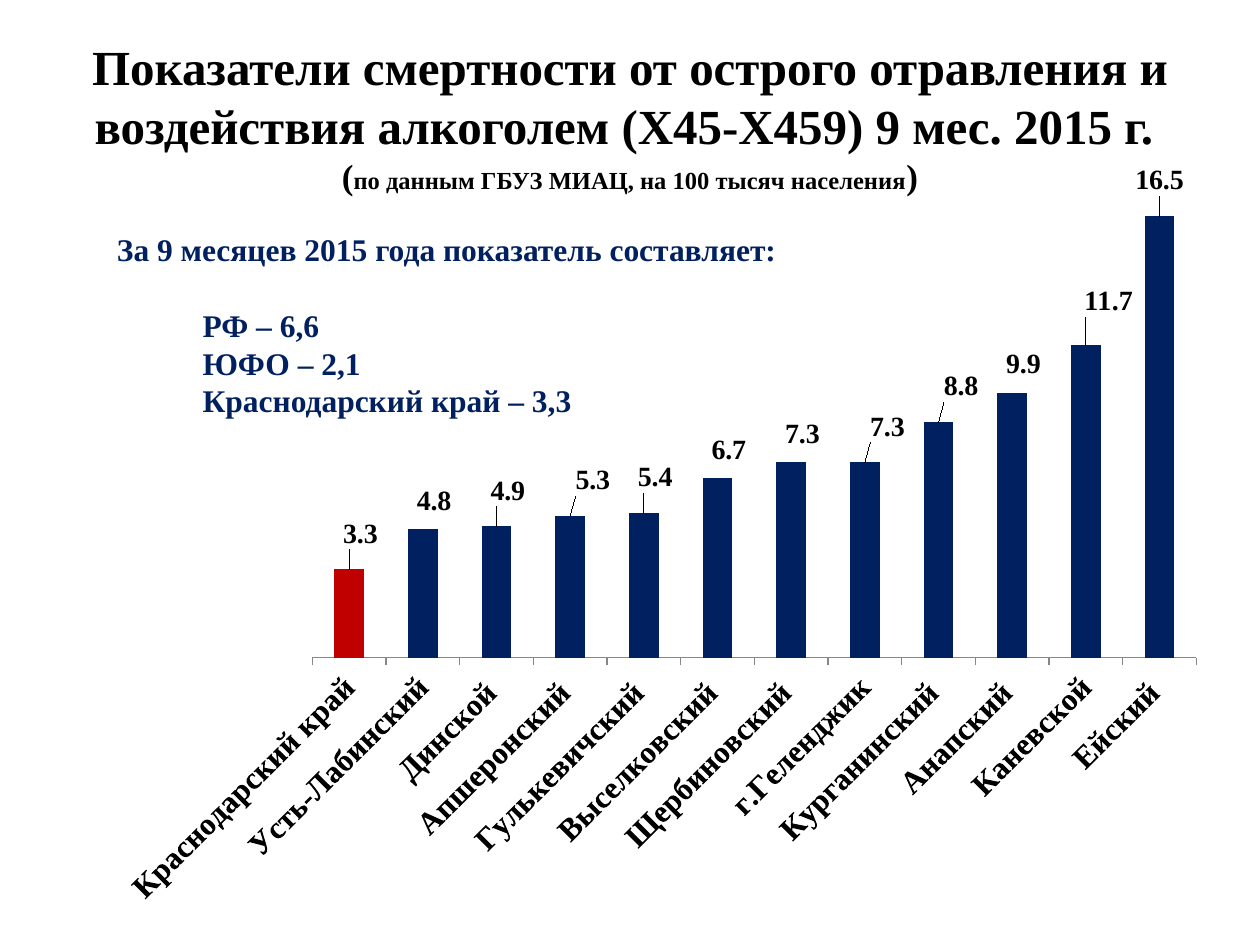
import pptx
import pptx.chart.data
import pptx.dml.color
import pptx.enum.chart
import pptx.enum.text
import pptx.oxml
import pptx.oxml.ns
import pptx.util
from pptx.util import Inches

FONT = "Times New Roman"
NAVY, RED, BLACK, GRAY = "002060", "C00000", "000000", "878787"
RATES = [
    ("Краснодарский край", 3.3), ("Усть-Лабинский", 4.8), ("Динской ", 4.9),
    ("Апшеронский ", 5.3), ("Гулькевичский ", 5.4), ("Выселковский ", 6.7),
    ("Щербиновский ", 7.3), ("г.Геленджик", 7.3), ("Курганинский ", 8.8),
    ("Анапский ", 9.9), ("Каневской", 11.7), ("Ейский ", 16.5),
]
LABEL_SHIFTS = [
    (0.01, -0.02), (0.01, -0.01), (0.01, -0.02), (0.02, -0.02),
    (0.01, -0.02), (0.01, -0.01), (0.01, -0.01), (0.02, -0.02),
    (0.02, -0.02), (0.01, -0.01), (0.02, -0.03), (0, -0.02),
]


def rgb(color):
    return pptx.dml.color.RGBColor.from_string(color)


def set_font(font, size, color=BLACK):
    font.name = FONT
    font.size = pptx.util.Pt(size)
    font.bold = True
    font.color.rgb = rgb(color)


def manual_layout(**values):
    tags = "".join(f'<c:{tag} val="{value}"/>' for tag, value in values.items())
    return pptx.oxml.parse_xml(
        f'<c:layout {pptx.oxml.ns.nsdecls("c")}>'
        f"<c:manualLayout>{tags}</c:manualLayout></c:layout>"
    )


def add_text_frame(slide, left, top, width, height):
    sp = slide.shapes.add_textbox(Inches(left), Inches(top), Inches(width), Inches(height))
    tf = sp.text_frame
    tf.word_wrap = True
    return tf


def add_title(slide):
    tf = add_text_frame(slide, 0.5, 0.3, 9, 1.25)
    tf.vertical_anchor = pptx.enum.text.MSO_ANCHOR.MIDDLE
    p = tf.paragraphs[0]
    p.alignment = pptx.enum.text.PP_ALIGN.CENTER
    heading = ("Показатели смертности от острого отравления и "
               "воздействия алкоголем (X45-X459) 9 мес. 2015 г. ")
    source = "по данным ГБУЗ МИАЦ, на 100 тысяч населения"
    for text, size in [(heading, 28), ("(", 20), (source, 14), (")", 20)]:
        r = p.add_run()
        r.text = text
        set_font(r.font, size)
        if text == heading:
            p.add_line_break()


def add_summary(slide):
    tf = add_text_frame(slide, 0.83, 1.78, 5.83, 1.31)
    lines = ["РФ – 6,6", "ЮФО – 2,1", "Краснодарский край – 3,3"]
    p = tf.paragraphs[0]
    p.text = "За 9 месяцев 2015 года показатель составляет:"
    set_font(p.font, 18, NAVY)
    for i, line in enumerate(lines):
        p = tf.add_paragraph()
        p.text = line
        p._p.get_or_add_pPr().set("marL", str(Inches(0.68)))
        if i == 0:
            p.space_before = pptx.util.Pt(21.5)
        set_font(p.font, 18, NAVY)


def style_axes(chart):
    axis = chart.category_axis
    axis.major_tick_mark = pptx.enum.chart.XL_TICK_MARK.OUTSIDE
    axis.format.line.color.rgb = rgb(GRAY)
    set_font(axis.tick_labels.font, 18)
    axis._element.txPr.bodyPr.set("rot", str(-45 * 60000))
    value_axis = chart.value_axis
    value_axis.minimum_scale = 0
    value_axis.maximum_scale = 18
    value_axis.has_major_gridlines = False
    value_axis.visible = False


def style_series(plot):
    plot.gap_width = 150
    plot.vary_by_categories = False
    series = plot.series[0]
    series.format.fill.solid()
    series.format.fill.fore_color.rgb = rgb(NAVY)
    region = series.points[0].format.fill
    region.solid()
    region.fore_color.rgb = rgb(RED)
    labels = series.data_labels
    labels.show_value = True
    set_font(labels.font, 16)
    for i, (x, y) in enumerate(LABEL_SHIFTS):
        label = series.points[i].data_label
        set_font(label.font, 16)
        label.position = pptx.enum.chart.XL_LABEL_POSITION.OUTSIDE_END
        d_lbl = labels._element.xpath(f"c:dLbl[c:idx/@val='{i}']")[0]
        d_lbl.insert(1, manual_layout(x=x, y=y))


def add_rate_chart(slide):
    data = pptx.chart.data.CategoryChartData()
    data.categories = [name for name, rate in RATES]
    data.add_series("Series 1", [rate for name, rate in RATES])
    chart = slide.shapes.add_chart(
        pptx.enum.chart.XL_CHART_TYPE.COLUMN_CLUSTERED,
        Inches(0.5), Inches(1.31), Inches(9), Inches(5.91), data,
    ).chart
    chart.has_legend = False
    chart.has_title = False
    chart.font.name = "Arial"
    chart.font.size = pptx.util.Pt(18)
    chart.font.color.rgb = rgb(BLACK)
    style_axes(chart)
    style_series(chart.plots[0])
    plot_area = chart._chartSpace.chart.plotArea
    for layout in plot_area.xpath("c:layout"):
        plot_area.remove(layout)
    plot_area.insert(0, manual_layout(
        layoutTarget="inner", xMode="edge", yMode="edge",
        x=0.22, y=0.01, w=0.78, h=0.65,
    ))


def main():
    prs = pptx.Presentation()
    prs.slide_width = Inches(10)
    prs.slide_height = Inches(7.5)
    slide = prs.slides.add_slide(prs.slide_layouts[6])
    add_title(slide)
    add_rate_chart(slide)
    add_summary(slide)
    prs.save("out.pptx")


if __name__ == "__main__":
    main()
